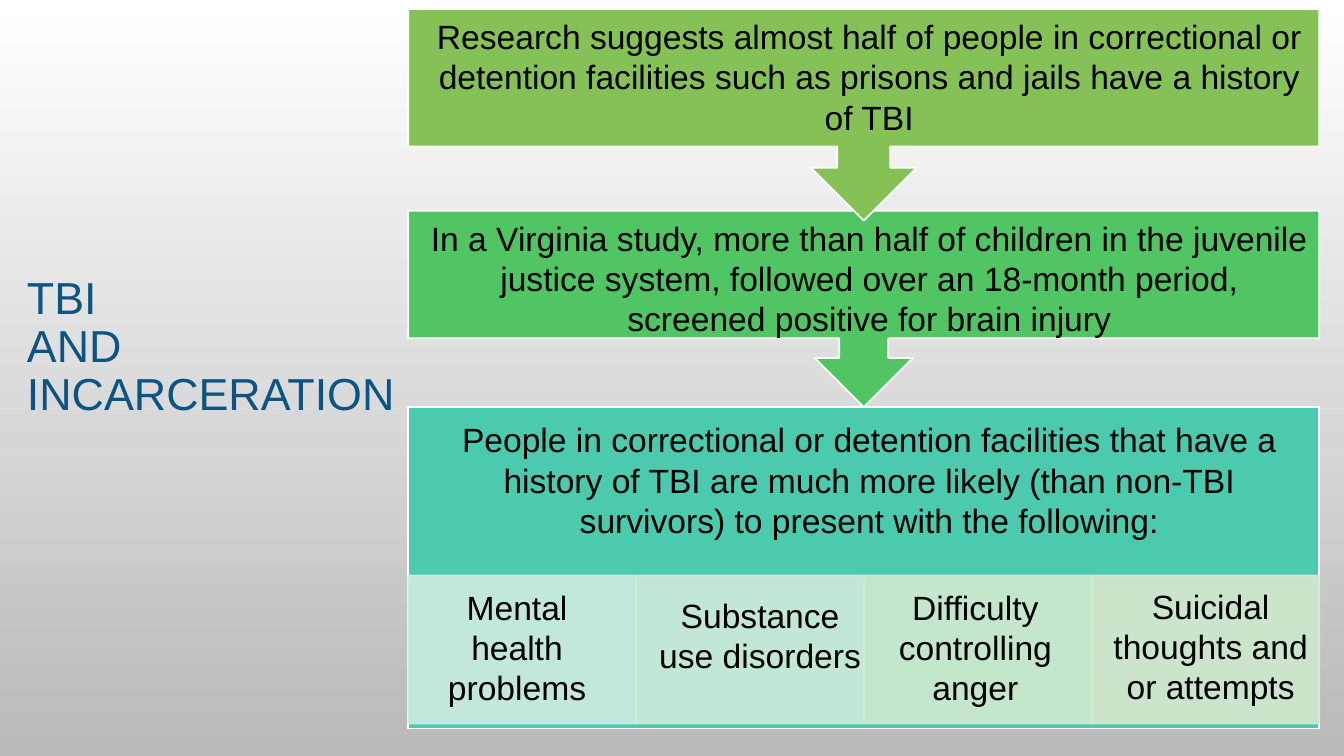
from lxml import etree
from pptx import Presentation
from pptx.dml.color import RGBColor
from pptx.enum.shapes import MSO_SHAPE
from pptx.enum.text import MSO_ANCHOR, PP_ALIGN
from pptx.oxml.ns import qn
from pptx.util import Cm, Pt

RECT = MSO_SHAPE.RECTANGLE
CALLOUT = MSO_SHAPE.DOWN_ARROW_CALLOUT
MIDDLE = MSO_ANCHOR.MIDDLE
CENTER = PP_ALIGN.CENTER

COLORS = {
    "white": "FFFFFF", "gray": "B9B9B9", "black": "000000", "navy": "0B5484",
    "lime": "86C157", "green": "51C564", "teal": "4BCAAD",
    "mint": "D0ECE3", "sage": "D0EBD9", "leaf": "D1EAD1", "moss": "D9E9D1",
}
LEFT, WIDTH = 10.29, 22.96
CELL = WIDTH / 4


def add_block(kind, box, fill, line, alpha=None):
    """Add a filled shape; alpha is the opacity of fill and line in percent."""
    block = slide.shapes.add_shape(kind, *map(Cm, box))
    block.shadow.inherit = False
    block.fill.solid()
    block.fill.fore_color.rgb = RGBColor.from_string(COLORS[fill])
    block.line.color.rgb = RGBColor.from_string(COLORS[line])
    block.line.width = Pt(1.25)
    if alpha:
        for color in block._element.spPr.iter(qn("a:srgbClr")):
            etree.SubElement(color, qn("a:alpha"), val=str(alpha * 1000))


def add_text(box, texts, size, color, align=None):
    """Add a text box with one paragraph per text and return its frame."""
    frame = slide.shapes.add_textbox(*map(Cm, box)).text_frame
    frame.word_wrap = True
    for i, text in enumerate(texts):
        para = frame.add_paragraph() if i else frame.paragraphs[0]
        para.text = text
        para.alignment = align
        for run in para.runs:
            run.font.name = "Arial"
            run.font.size = Pt(size)
            run.font.color.rgb = RGBColor.from_string(COLORS[color])
    return frame


prs = Presentation()
prs.slide_width, prs.slide_height = Cm(33.87), Cm(19.05)
slide = prs.slides.add_slide(prs.slide_layouts[6])

back = slide.background.fill
back.gradient()
back.gradient_angle = 270
for stop, name in zip(back.gradient_stops, ("white", "gray")):
    stop.color.rgb = RGBColor.from_string(COLORS[name])

# Title
title = add_text((0.43, 1.19, 10.34, 15.16), ["TBI \nAND\nINCARCERATION"], 32, "navy")
title.vertical_anchor = MIDDLE
title.paragraphs[0].line_spacing = 0.9

# Flow of findings, from the bottom up so that each arrow overlaps the next block
add_block(RECT, (LEFT, 10.26, WIDTH, 8.1), "teal", "white")
for i, tint in enumerate(("mint", "sage", "leaf", "moss")):
    add_block(RECT, (LEFT + i * CELL, 14.5, CELL, 3.73), tint, tint, 90)
add_block(CALLOUT, (LEFT, 5.31, WIDTH, 4.95), "green", "white")
add_block(CALLOUT, (LEFT, 0.23, WIDTH, 5.33), "lime", "white")

facts = add_text((10.54, 0.28, 22.73, 15.65), [
    "Research suggests almost half of people in correctional or detention "
    "facilities such as prisons and jails have a history of TBI",
    "In a Virginia study, more than half of children in the juvenile justice "
    "system, followed over an 18-month period, screened positive for brain injury",
    "People in correctional or detention facilities that have a history of TBI "
    "are much more likely (than non-TBI survivors) to present with the following:",
], 24, "black", CENTER)
for para in facts.paragraphs[1:]:
    para.space_before = Pt(57.6)

# Outcomes
for left, top, width, text in (
    (10.54, 14.66, 4.98, "Mental health problems"),
    (16.21, 14.86, 5.89, "Substance use disorders"),
    (21.89, 14.66, 5.38, "Difficulty controlling anger"),
    (27.41, 14.63, 6.2, "Suicidal thoughts and or attempts"),
):
    add_text((left, top, width, 3.33), [text], 24, "black", CENTER)

prs.save("out.pptx")
